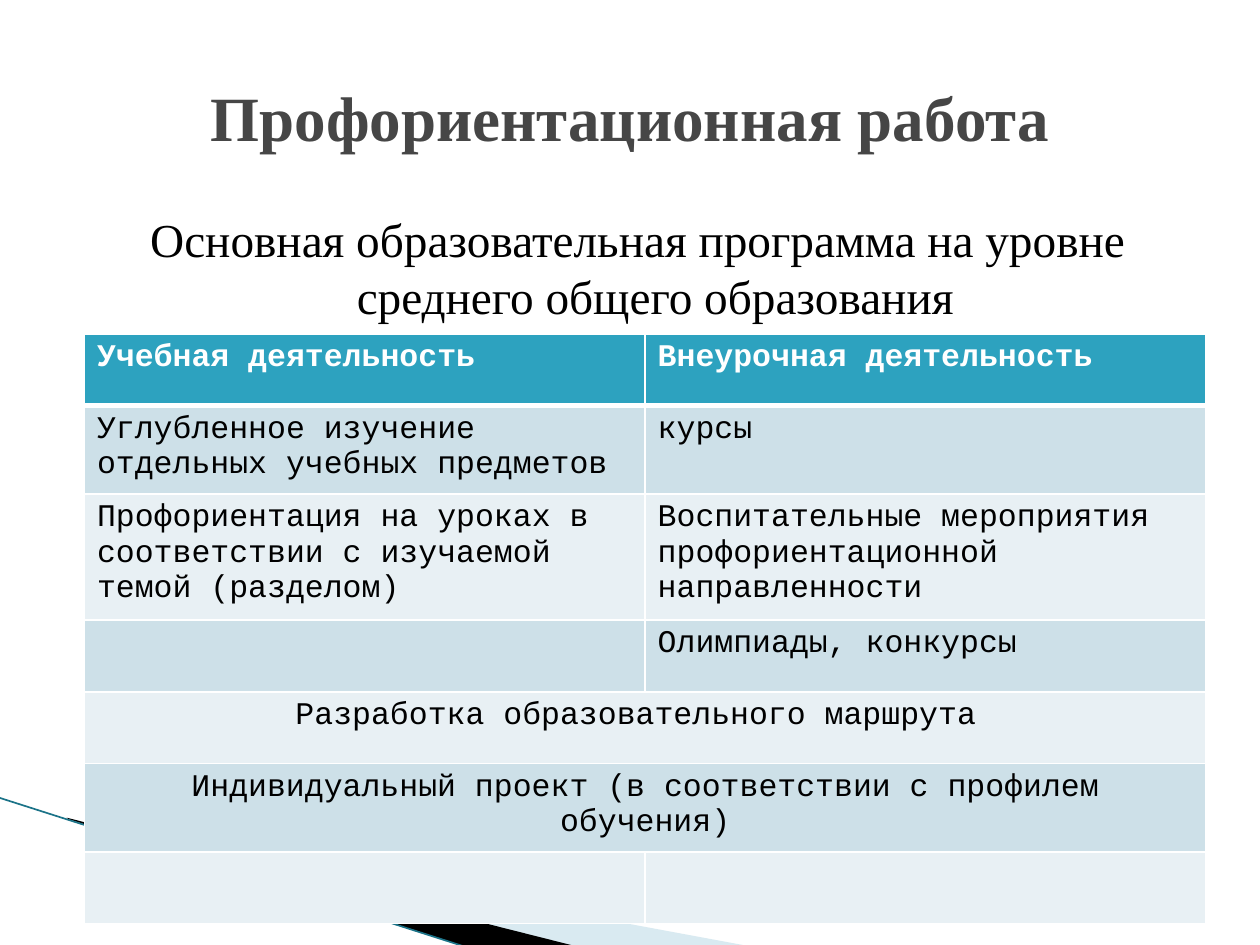
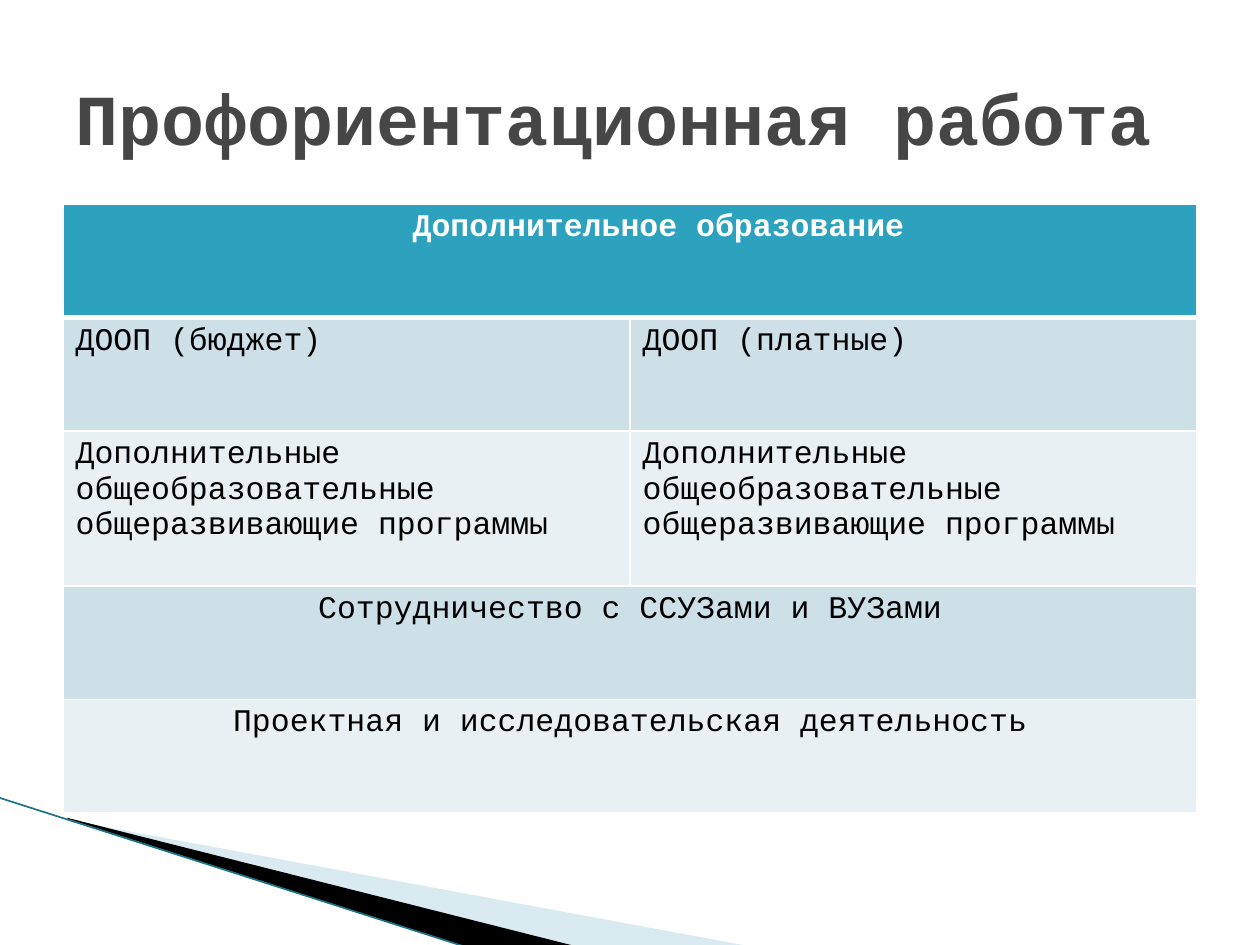
from pptx import Presentation
from pptx.dml.color import RGBColor
from pptx.enum.shapes import MSO_CONNECTOR
from pptx.enum.text import MSO_ANCHOR, MSO_AUTO_SIZE, PP_ALIGN
from pptx.oxml.ns import qn
from pptx.util import Inches, Pt
from lxml.etree import SubElement

SLIDE_W, SLIDE_H = 10, 7.5
SIDE = 0.05 * SLIDE_W
CONTENT_W = SLIDE_W - 2 * SIDE
BODY_TOP = 1.62
SERIF, MONO = "Times New Roman", "Courier New"
WHITE, BLACK, TITLE_GREY = "FFFFFF", "000000", "464646"
HEADER, BANDS = "2DA2BF", ("CDE0E8", "E8F0F4")
SWOOSH, SWOOSH_LINE = "A0CBDC", "1B7388"
CELL_MARGIN = 0.1


def rgb(value):
    return RGBColor.from_string(value)


def set_attrs(target, **values):
    for name, value in values.items():
        setattr(target, name, value)


def write(tf, text, align, size, font, color, bold=False):
    p = tf.paragraphs[0]
    p.alignment = align
    r = p.add_run()
    r.text = text
    set_attrs(r.font, name=font, size=Pt(size), bold=bold)
    r.font.color.rgb = rgb(color)
    return p


def add_wedge(shapes, points, color, alpha=None):
    """Fill an outline given in hundredths of an inch."""
    builder = shapes.build_freeform(*points[0], scale=Inches(0.01))
    builder.add_line_segments(points[1:], close=True)
    sp = builder.convert_to_shape()
    sp.shadow.inherit = False
    sp.line.fill.background()
    sp.fill.solid()
    sp.fill.fore_color.rgb = rgb(color)
    if alpha:
        clr = sp.element.spPr.find(qn("a:solidFill"))[0]
        SubElement(clr, qn("a:alpha"), val=str(alpha * 1000))
    return sp


def add_swoosh(slide, layout):
    """Draw the corner decoration, then hand it to the shared layout."""
    shapes = slide.shapes
    pale = add_wedge(shapes, [(55, 651), (595, 751), (456, 751), (55, 650)], SWOOSH, 40)
    dark = add_wedge(shapes, [(53, 649), (457, 751), (372, 752), (54, 650)], BLACK)
    edge = shapes.add_connector(MSO_CONNECTOR.STRAIGHT, Inches(-0.01), Inches(6.33),
                                Inches(3.71), Inches(7.52))
    edge.line.width = Pt(0.95)
    edge.line.color.rgb = rgb(SWOOSH_LINE)
    SubElement(edge.element.spPr, qn("a:effectLst"))
    for part in (pale, dark, edge):
        layout.shapes.element.append(part.element)


def set_title(slide, text, align, size, font):
    title = slide.shapes.title
    set_attrs(title, left=Inches(SIDE), top=Inches(0.04 * SLIDE_H),
              width=Inches(CONTENT_W), height=Inches(1.25))
    tf = title.text_frame
    set_attrs(tf, word_wrap=True, auto_size=MSO_AUTO_SIZE.NONE,
              vertical_anchor=MSO_ANCHOR.MIDDLE)
    write(tf, text, align, size, font, TITLE_GREY, True)


def add_subtitle(slide, text):
    box = slide.shapes.add_textbox(Inches(SIDE), Inches(BODY_TOP), Inches(CONTENT_W), Inches(1))
    box.text_frame.word_wrap = True
    p = write(box.text_frame, text, PP_ALIGN.CENTER, 27, SERIF, BLACK)
    pPr = p._p.get_or_add_pPr()
    pPr.set("marL", str(Inches(0.4)))
    pPr.set("indent", str(Inches(-0.28)))


def set_borders(cell, is_header):
    tcPr = cell._tc.get_or_add_tcPr()
    for index, side in enumerate(("lnL", "lnR", "lnT", "lnB")):
        width = Pt(3) if is_header and side == "lnB" else Pt(1)
        ln = tcPr.makeelement(qn(f"a:{side}"), {"w": str(width)})
        fill = SubElement(ln, qn("a:solidFill"))
        SubElement(fill, qn("a:srgbClr"), val=WHITE)
        tcPr.insert(index, ln)


def add_table(slide, left, top, width, heights, rows, insets):
    """Rows with a single text span both columns; insets widen a row's margins."""
    frame = slide.shapes.add_table(len(rows), 2, Inches(left), Inches(top),
                                   Inches(width), Inches(sum(heights)))
    table = frame.table
    for i, (texts, height) in enumerate(zip(rows, heights)):
        table.rows[i].height = Inches(height)
        is_header, is_span = i == 0, len(texts) == 1
        if is_span:
            table.cell(i, 0).merge(table.cell(i, 1))
        for j in range(2):
            cell = table.cell(i, j)
            cell.fill.solid()
            cell.fill.fore_color.rgb = rgb(HEADER if is_header else BANDS[(i - 1) % 2])
            set_borders(cell, is_header)
            for name, extra in insets.get(i, {}).items():
                setattr(cell, name, Inches(CELL_MARGIN + extra))
            if j < len(texts) and texts[j]:
                write(cell.text_frame, texts[j],
                      PP_ALIGN.CENTER if is_span else PP_ALIGN.LEFT,
                      18, MONO, WHITE if is_header else BLACK, is_header)


def add_programme_slide(slide):
    set_title(slide, "Профориентационная работа", PP_ALIGN.CENTER, 36, SERIF)
    add_subtitle(slide, "Основная образовательная программа на уровне среднего общего образования")
    rows = [
        ("Учебная деятельность", "Внеурочная деятельность"),
        ("Углубленное изучение отдельных учебных предметов", "курсы"),
        ("Профориентация на уроках в соответствии с изучаемой темой (разделом)",
         "Воспитательные мероприятия профориентационной направленности"),
        ("", "Олимпиады, конкурсы"),
        ("Разработка образовательного маршрута",),
        ("Индивидуальный проект (в соответствии с профилем обучения)",),
        ("", ""),
    ]
    add_table(slide, 0.67, 2.65, 8.9, [0.57] * len(rows), rows, {4: {"margin_right": 0.15}})


def add_extra_education_slide(slide):
    set_title(slide, "Профориентационная работа", PP_ALIGN.LEFT, 41, MONO)
    programmes = "Дополнительные общеобразовательные общеразвивающие программы"
    rows = [
        ("Дополнительное образование",),
        ("ДООП (бюджет)", "ДООП (платные)"),
        (programmes, programmes),
        ("Сотрудничество с ССУЗами и ВУЗами",),
        ("Проектная и исследовательская деятельность",),
    ]
    add_table(slide, SIDE, BODY_TOP, CONTENT_W, [0.9, 0.9, 1.23, 0.9, 0.9], rows,
              {0: {"margin_left": 0.45}})


def main():
    prs = Presentation()
    set_attrs(prs, slide_width=Inches(SLIDE_W), slide_height=Inches(SLIDE_H))
    layout = prs.slide_layouts.get_by_name("Title Only")
    first, second = (prs.slides.add_slide(layout) for _ in range(2))
    add_swoosh(first, layout)
    add_programme_slide(first)
    add_extra_education_slide(second)
    prs.save("out.pptx")


if __name__ == "__main__":
    main()
